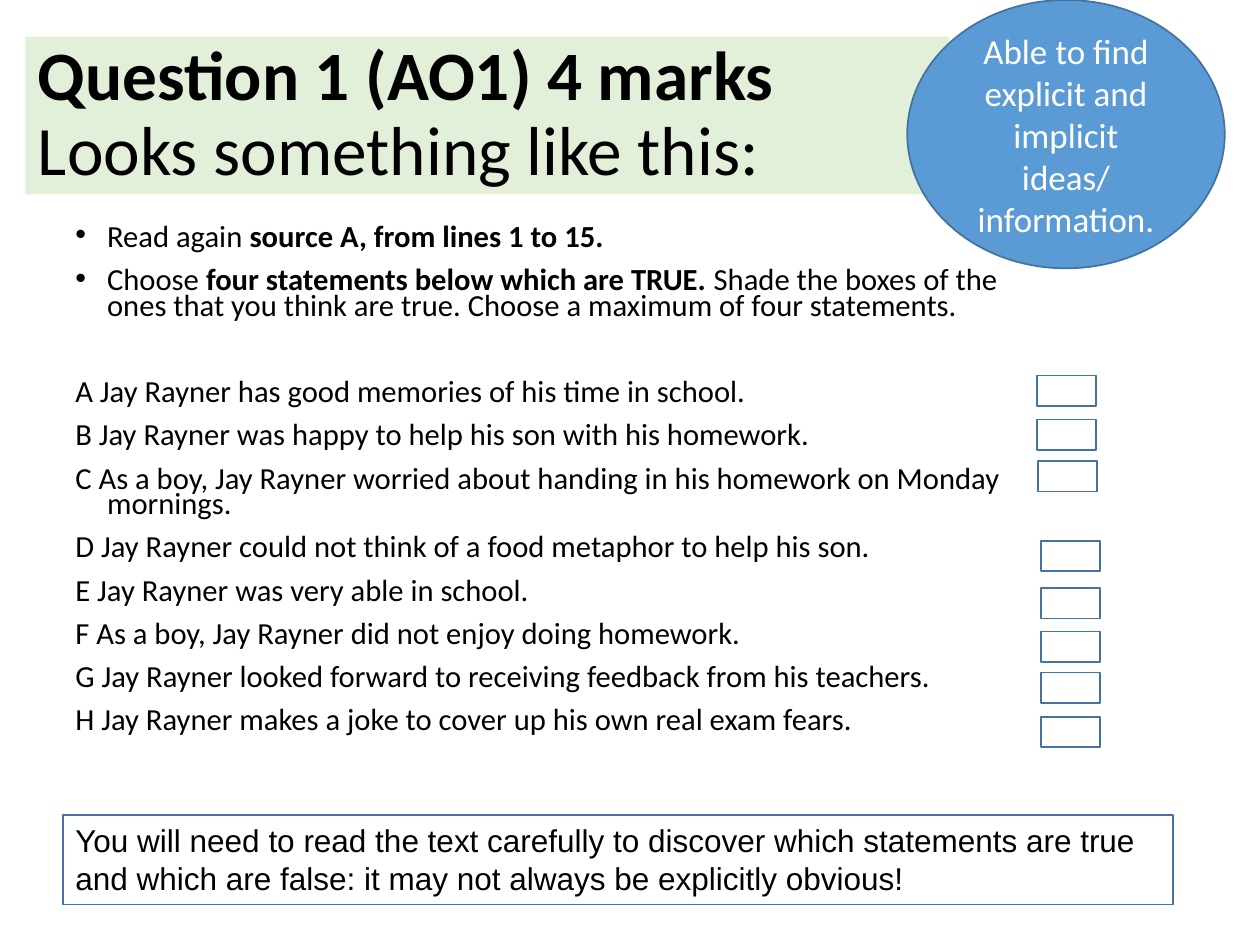
from lxml import etree
from pptx import Presentation
from pptx.dml.color import RGBColor
from pptx.enum.shapes import MSO_SHAPE
from pptx.enum.text import MSO_ANCHOR, MSO_AUTO_SIZE, PP_ALIGN
from pptx.oxml.ns import qn
from pptx.util import Cm, Pt

THEME = {
    "black": RGBColor(0x00, 0x00, 0x00),
    "white": RGBColor(0xFF, 0xFF, 0xFF),
    "band": RGBColor(0xE2, 0xF0, 0xD9),
    "blue": RGBColor(0x5B, 0x9B, 0xD5),
    "outline": RGBColor(0x43, 0x73, 0x9E),
    "title_size": Pt(39.6),
    "callout_size": Pt(20),
    "note_size": Pt(18),
    "body_size": Pt(17.5),
}


def add_run(p, text, size, color="black", font="Calibri", bold=False):
    r = p.add_run()
    r.text = text
    for name, value in {"name": font, "size": THEME[size], "bold": bold}.items():
        setattr(r.font, name, value)
    r.font.color.rgb = THEME[color]


def add_box(kind, left, top, width, height, fill=None, line_width=1):
    sp = s.shapes.add_shape(kind, Cm(left), Cm(top), Cm(width), Cm(height))
    sp.shadow.inherit = False
    if fill:
        sp.fill.solid()
        sp.fill.fore_color.rgb = THEME[fill]
    else:
        sp.fill.background()
    sp.line.color.rgb = THEME["outline"]
    sp.line.width = Pt(line_width)
    sp.text_frame.word_wrap = True
    return sp


prs = Presentation()
prs.slide_width, prs.slide_height = Cm(25.4), Cm(19.05)
s = prs.slides.add_slide(prs.slide_layouts[5])

# Title band
title = s.shapes.title
place = {"left": Cm(0.51), "top": Cm(0.74), "width": Cm(18.62), "height": Cm(3.18)}
for name, value in place.items():
    setattr(title, name, value)
title.fill.solid()
title.fill.fore_color.rgb = THEME["band"]
tf = title.text_frame
tf.auto_size = MSO_AUTO_SIZE.NONE
tf.vertical_anchor = MSO_ANCHOR.MIDDLE
p = tf.paragraphs[0]
p.alignment = PP_ALIGN.LEFT
p.line_spacing = 0.9
add_run(p, "Question 1 (AO1) 4 marks", "title_size", bold=True)
p.add_line_break()
add_run(p, "Looks something like this:", "title_size")

# Instructions and statements: each paragraph is a list of (text, bold)
instructions = [
    [("Read again ", False), ("source A, from lines 1 to 15.", True)],
    [("Choose ", False), ("four statements below which are TRUE. ", True),
     ("Shade the boxes of the ones that you think are true. "
      "Choose a maximum of four statements.", False)],
]
statements = [
    "A Jay Rayner has good memories of his time in school.",
    "B Jay Rayner was happy to help his son with his homework.",
    "C As a boy, Jay Rayner worried about handing in his homework on Monday mornings.",
    "D Jay Rayner could not think of a food metaphor to help his son.",
    "E Jay Rayner was very able in school.",
    "F As a boy, Jay Rayner did not enjoy doing homework.",
    "G Jay Rayner looked forward to receiving feedback from his teachers.",
    "H Jay Rayner makes a joke to cover up his own real exam fears.",
]
paragraphs = instructions + [[(text, False)] for text in statements]
body = s.shapes.add_textbox(Cm(1.27), Cm(4.45), Cm(20.04), Cm(12.57))
tf = body.text_frame
tf.word_wrap = True
for i, parts in enumerate(paragraphs):
    p = tf.paragraphs[0] if i == 0 else tf.add_paragraph()
    p.line_spacing = 0.7
    # The first statement stands one line clear of the instructions
    p.space_before = Pt(34.6 if i == len(instructions) else 10)
    pPr = p._p.get_or_add_pPr()
    pPr.set("marL", str(Cm(0.64)))
    pPr.set("indent", str(-Cm(0.64)))
    if i < len(instructions):
        etree.SubElement(pPr, qn("a:buFont")).set("typeface", "Arial")
        etree.SubElement(pPr, qn("a:buChar")).set("char", "•")
    for text, bold in parts:
        add_run(p, text, "body_size", bold=bold)

# Answer boxes, one beside each statement
answer_boxes = [(20.9, 7.57), (20.9, 8.46), (20.93, 9.3), (20.98, 10.9),
                (20.98, 11.86), (20.98, 12.73), (20.98, 13.56), (20.98, 14.45)]
for left, top in answer_boxes:
    add_box(MSO_SHAPE.RECTANGLE, left, top, 1.19, 0.61, "white")

# Skill callout
callout = add_box(MSO_SHAPE.OVAL, 18.29, 0, 6.4, 5.41, "blue")
tf = callout.text_frame
tf.vertical_anchor = MSO_ANCHOR.MIDDLE
p = tf.paragraphs[0]
p.alignment = PP_ALIGN.CENTER
add_run(p, "Able to find explicit and implicit ideas/ information.",
        "callout_size", "white")

# Reminder note
note = add_box(MSO_SHAPE.RECTANGLE, 1.27, 16.43, 22.38, 1.8, line_width=0.75)
tf = note.text_frame
tf.auto_size = MSO_AUTO_SIZE.SHAPE_TO_FIT_TEXT
tf.vertical_anchor = MSO_ANCHOR.TOP
p = tf.paragraphs[0]
p.alignment = PP_ALIGN.LEFT
add_run(p, "You will need to read the text carefully to discover which statements are "
           "true and which are false: it may not always be explicitly obvious!",
        "note_size", font="Arial")

prs.save("out.pptx")
